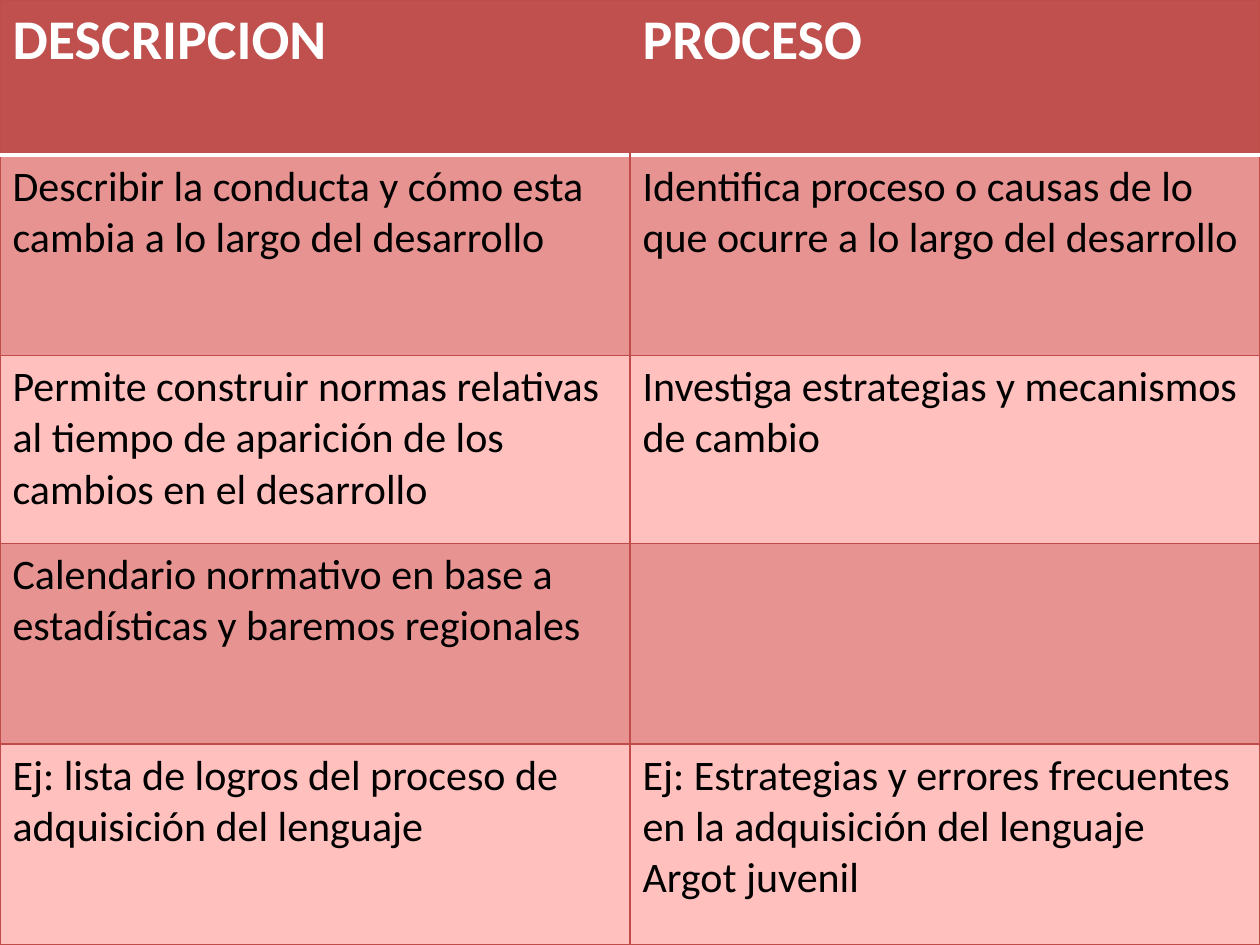
from lxml import etree
from pptx import Presentation
from pptx.dml.color import RGBColor
from pptx.oxml.ns import qn
from pptx.util import Pt

HEADER, DARK, LIGHT = "C0504D", "E69391", "FFC0BE"
BORDER, WHITE, BLACK = "BF4C48", "FFFFFF", "000000"
ROWS = [
    ("DESCRIPCION", "PROCESO"),
    ("Describir la conducta y cómo esta cambia a lo largo del desarrollo",
     "Identifica proceso o causas de lo que ocurre a lo largo del desarrollo"),
    ("Permite construir normas relativas al tiempo de aparición de los "
     "cambios en el desarrollo",
     "Investiga estrategias y mecanismos de cambio"),
    ("Calendario normativo en base a estadísticas y baremos regionales", ""),
    ("Ej: lista de logros del proceso de adquisición del lenguaje",
     "Ej: Estrategias y errores frecuentes en la adquisición del lenguaje\n"
     "Argot juvenil"),
]
HEIGHTS = [88.6, 114.6, 107.4, 114.6, 114.6]


def rgb(color):
    return RGBColor.from_string(color)


def set_borders(cell, sides):
    """Draw (color, width) borders in left, right, top, bottom order; None hides one."""
    tcPr = cell._tc.get_or_add_tcPr()
    for i, (tag, side) in enumerate(zip(("lnL", "lnR", "lnT", "lnB"), sides)):
        ln = etree.Element(qn("a:" + tag))
        if side:
            color, width = side
            ln.set("w", str(Pt(width)))
            fill = etree.SubElement(ln, qn("a:solidFill"))
            etree.SubElement(fill, qn("a:srgbClr")).set("val", color)
        else:
            etree.SubElement(ln, qn("a:noFill"))
        tcPr.insert(i, ln)


prs = Presentation()
prs.slide_width, prs.slide_height = Pt(720), Pt(540)
s = prs.slides.add_slide(prs.slide_layouts[6])
table = s.shapes.add_table(len(ROWS), 2, 0, 0, Pt(720), Pt(sum(HEIGHTS))).table
for col in table.columns:
    col.width = Pt(360)

thin, rule = (BORDER, 0.75), (WHITE, 2)
for r, (texts, height) in enumerate(zip(ROWS, HEIGHTS)):
    table.rows[r].height = Pt(height)
    header = r == 0
    for c, text in enumerate(texts):
        cell = table.cell(r, c)
        cell.fill.solid()
        cell.fill.fore_color.rgb = rgb(HEADER if header else DARK if r % 2 else LIGHT)
        set_borders(cell, (
            None if header and c == 1 else thin,
            None if header and c == 0 else thin,
            rule if r == 1 else thin,
            rule if header else thin,
        ))
        cell.text_frame.text = text
        for p in cell.text_frame.paragraphs:
            for run in p.runs:
                run.font.name = "Calibri"
                run.font.size = Pt(32 if header else 24)
                run.font.bold = header
                run.font.color.rgb = rgb(WHITE if header else BLACK)

prs.save("out.pptx")
